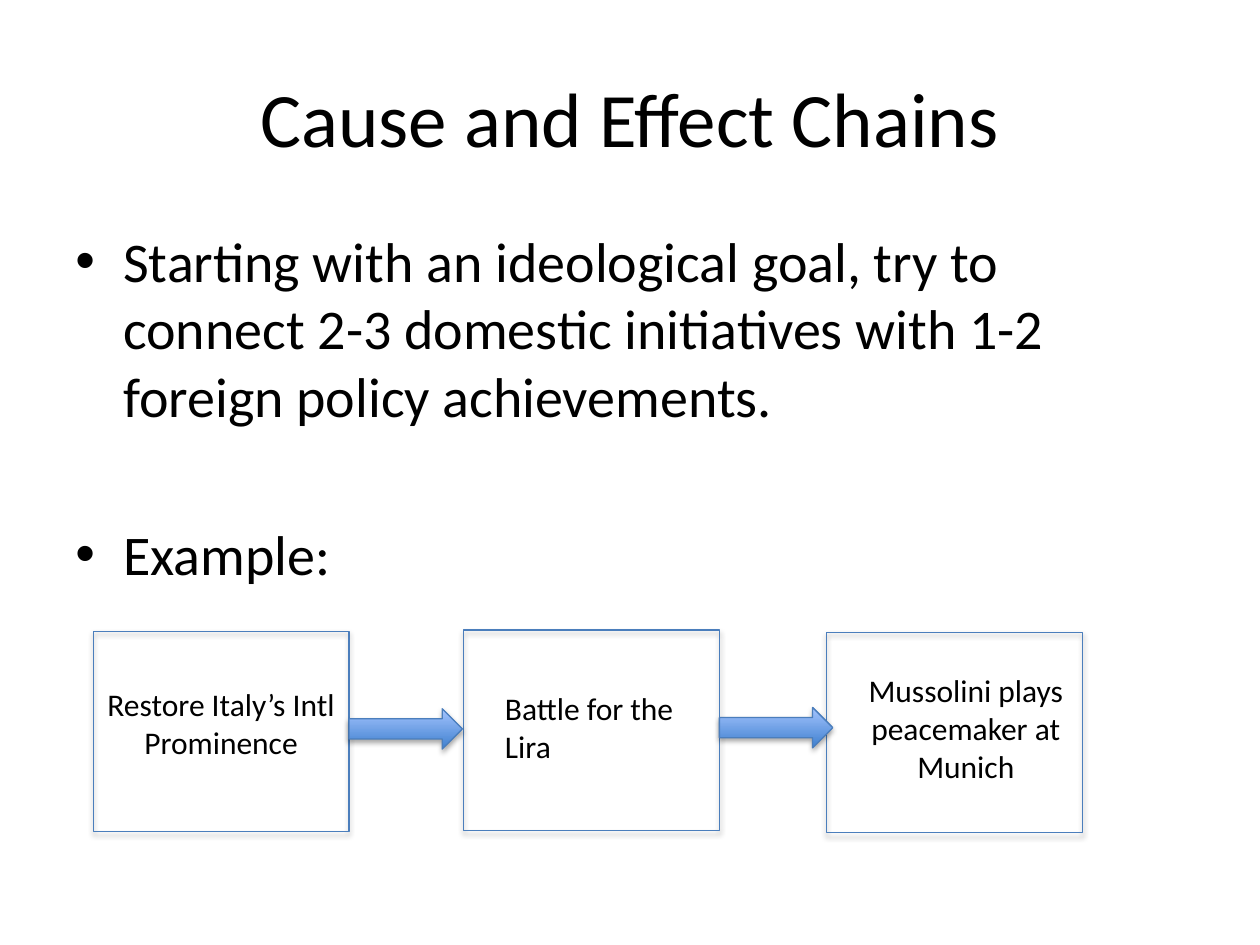
from dataclasses import dataclass

from lxml import etree
from pptx import Presentation
from pptx import util as u
from pptx.dml.color import RGBColor
from pptx.enum import shapes, text
from pptx.oxml import parse_xml
from pptx.oxml.ns import nsdecls, qn

WIDTH, HEIGHT = u.Inches(10), u.Inches(7.5)
COLUMNS, ROWS = 100, 75
CELL_W, CELL_H = WIDTH / COLUMNS, HEIGHT / ROWS
FONT = "Calibri"
INK, EDGE, ARROW_DARK, ARROW_LIGHT = "000000", "4B7EBC", "3F80CE", "A4C4FF"
CENTER, LEFT = text.PP_ALIGN.CENTER, text.PP_ALIGN.LEFT
STEP_W, STEP_H = 20.3, 15.9
ARROW_W, ARROW_H = 9, 3.2


@dataclass(frozen=True)
class Area:
    """A rectangle in grid columns and rows."""
    column: float
    row: float
    columns: float
    rows: float

    def emu(self) -> tuple[int, int, int, int]:
        return (round(self.column * CELL_W), round(self.row * CELL_H),
                round(self.columns * CELL_W), round(self.rows * CELL_H))


@dataclass(frozen=True)
class Step:
    column: float
    row: float
    label: str
    label_area: Area
    align: text.PP_ALIGN = CENTER


STEPS = [
    Step(7.4, 50.1, "Restore Italy’s Intl Prominence", Area(7.4, 53.9, 20.3, 7.1)),
    Step(36.8, 50, "Battle for the Lira", Area(39.1, 54.2, 15.6, 7.1), LEFT),
    Step(65.6, 50.2, "Mussolini plays peacemaker at Munich", Area(67.4, 52.8, 18.5, 10.1)),
]
GOAL = ("Starting with an ideological goal, try to connect 2-3 domestic "
        "initiatives with 1-2 foreign policy achievements.")


def color(value: str) -> RGBColor:
    return RGBColor.from_string(value)


def write(paragraph, content: str, *, size: float, align=LEFT,
          before: float = 0, bullet: bool = False) -> None:
    paragraph.alignment = align
    paragraph.space_before = u.Pt(before)
    run = paragraph.add_run()
    run.text = content
    run.font.name, run.font.size = FONT, u.Pt(size)
    run.font.color.rgb = color(INK)
    if bullet:
        properties = paragraph._p.get_or_add_pPr()
        indent = u.Inches(0.38)
        properties.set("marL", str(indent))
        properties.set("indent", str(-indent))
        etree.SubElement(properties, qn("a:buFont")).set("typeface", "Arial")
        etree.SubElement(properties, qn("a:buChar")).set("char", "•")


def add_text_frame(slide, area: Area):
    frame = slide.shapes.add_textbox(*area.emu()).text_frame
    frame.word_wrap = True
    return frame


def add_outlined(slide, kind: shapes.MSO_SHAPE, area: Area):
    """Add an unfilled shape with the common edge and soft shadow."""
    shape = slide.shapes.add_shape(kind, *area.emu())
    shape.fill.background()
    shape.line.color.rgb = color(EDGE)
    shape.line.width = u.Pt(0.75)
    shape._element.spPr.append(parse_xml(
        f'<a:effectLst {nsdecls("a")}>'
        f'<a:outerShdw blurRad="{u.Pt(3.1)}" dist="{u.Pt(1.8)}" dir="5400000" rotWithShape="0">'
        f'<a:srgbClr val="{INK}"><a:alpha val="35000"/></a:srgbClr>'
        '</a:outerShdw></a:effectLst>'))
    return shape


def add_step(slide, step: Step) -> None:
    add_outlined(slide, shapes.MSO_SHAPE.RECTANGLE,
                 Area(step.column, step.row, STEP_W, STEP_H))
    label = add_text_frame(slide, step.label_area)
    write(label.paragraphs[0], step.label, size=18, align=step.align)


def add_arrow_after(slide, step: Step) -> None:
    middle = step.row + STEP_H / 2
    arrow = add_outlined(slide, shapes.MSO_SHAPE.RIGHT_ARROW,
                         Area(step.column + STEP_W, middle - ARROW_H / 2 - 0.2,
                              ARROW_W, ARROW_H))
    arrow.fill.gradient()
    arrow.fill.gradient_angle = 90
    for stop, shade, position in zip(arrow.fill.gradient_stops,
                                     (ARROW_DARK, ARROW_LIGHT), (0, 1)):
        stop.color.rgb = color(shade)
        stop.position = position


def main() -> None:
    deck = Presentation()
    deck.slide_width, deck.slide_height = WIDTH, HEIGHT
    slide = deck.slides.add_slide(deck.slide_layouts[5])

    title = slide.shapes.title
    title.left, title.top, title.width, title.height = Area(5, 3, 90, 12.5).emu()
    title.text_frame.vertical_anchor = text.MSO_ANCHOR.MIDDLE
    write(title.text_frame.paragraphs[0], "Cause and Effect Chains", size=44, align=CENTER)

    body = add_text_frame(slide, Area(5, 17.5, 90, 49.5))
    write(body.paragraphs[0], GOAL, size=32, bullet=True)
    write(body.add_paragraph(), "Example:", size=32, before=52, bullet=True)

    for step in STEPS:
        add_step(slide, step)
    for step in STEPS[:-1]:
        add_arrow_after(slide, step)

    deck.save("out.pptx")


if __name__ == "__main__":
    main()
